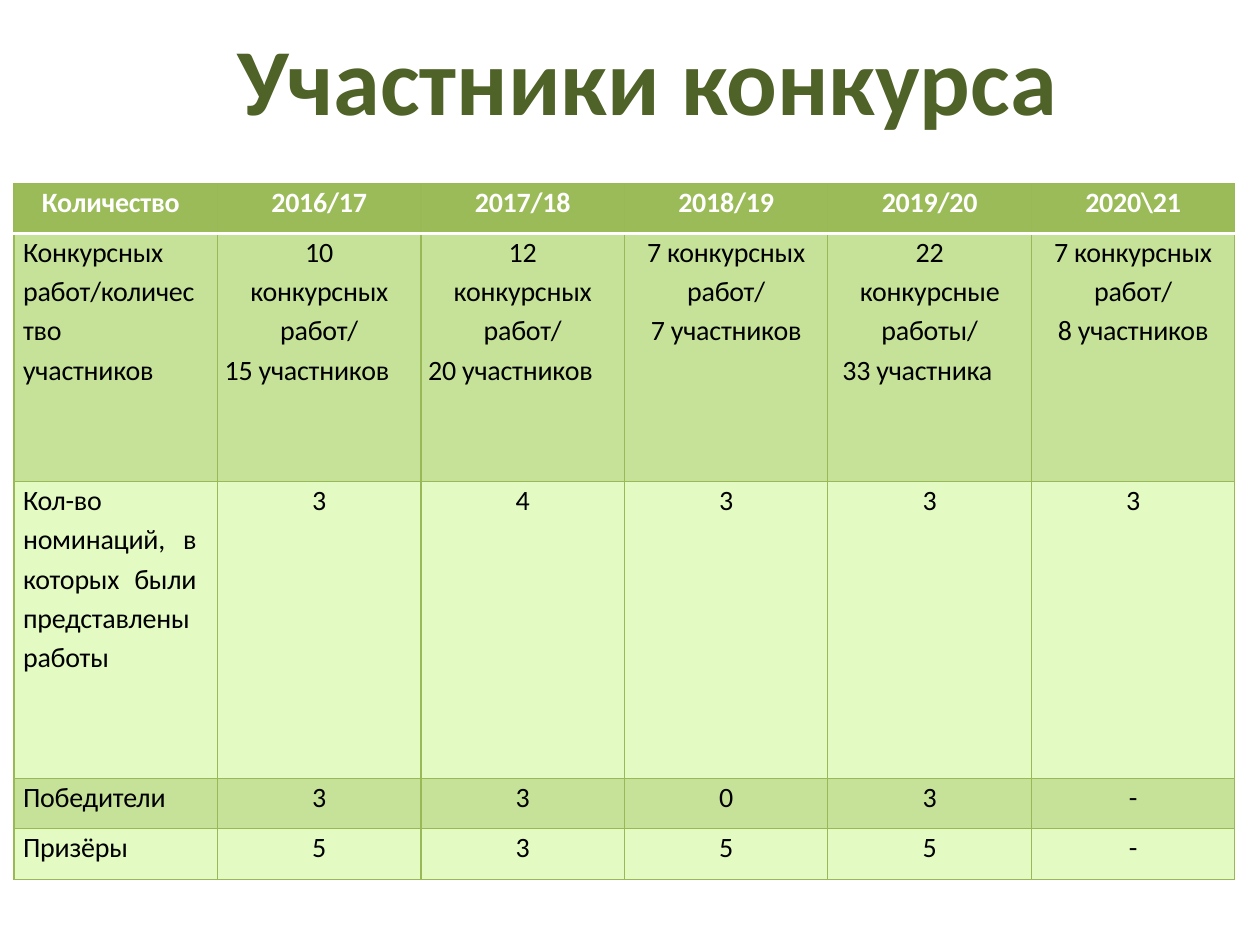
from dataclasses import dataclass

from lxml.etree import SubElement
from pptx import Presentation
from pptx.dml.color import RGBColor
from pptx.enum.text import MSO_AUTO_SIZE, PP_ALIGN
from pptx.oxml.ns import qn
from pptx.util import Pt

LEFT, MID, JUST = PP_ALIGN.LEFT, PP_ALIGN.CENTER, PP_ALIGN.JUSTIFY
FIT = MSO_AUTO_SIZE.SHAPE_TO_FIT_TEXT


@dataclass
class Theme:
    font: str = "Calibri"
    title: float = 54
    body: float = 16
    dark: str = "4F6228"
    head: str = "9BBB59"
    band: str = "C6E298"
    pale: str = "E3FBC2"
    rule: str = "98B955"
    white: str = "FFFFFF"
    black: str = "000000"


@dataclass
class Line:
    text: str
    align: int = MID
    left: float = 0
    right: float = 0
    gap: float = 0
    lead: float = 1


class Deck:
    """Draws styled elements on the current slide."""

    def __init__(self, theme):
        self.theme = theme
        self.prs = Presentation()
        self.prs.slide_width, self.prs.slide_height = Pt(720), Pt(540)
        self.slide = self.prs.slides.add_slide(self.prs.slide_layouts[6])

    def run(self, para, text, size, color, bold, track=0):
        run = para.add_run()
        run.text = text
        font = run.font
        font.name, font.size, font.bold = self.theme.font, Pt(size), bold
        font.color.rgb = RGBColor.from_string(color)
        if track:
            run._r.get_or_add_rPr().set("spc", str(round(track * 100)))
        return run

    def stroke(self, node, tag, color, width):
        line = SubElement(node, qn(tag), w=str(Pt(width)))
        fill = SubElement(line, qn("a:solidFill"))
        SubElement(fill, qn("a:srgbClr"), val=color)
        return line

    def title(self, text, left, top, width, height):
        box = self.slide.shapes.add_textbox(Pt(left), Pt(top), Pt(width), Pt(height))
        frame = box.text_frame
        frame.word_wrap, frame.auto_size = False, FIT
        para = frame.paragraphs[0]
        para.alignment = MID
        run = self.run(para, text, self.theme.title, self.theme.dark, True)
        props = run._r.get_or_add_rPr()
        props.insert(0, self.stroke(props, "a:ln", self.theme.dark, 0.75))

    def lines(self, frame, lines, color, bold):
        for pos, line in enumerate(lines):
            para = frame.add_paragraph() if pos else frame.paragraphs[0]
            para.alignment, para.line_spacing = line.align, line.lead
            if line.gap:
                para.space_before = Pt(line.gap)
            props = para._p.get_or_add_pPr()
            props.set("marL", str(Pt(line.left)))
            props.set("marR", str(Pt(line.right)))
            self.run(para, line.text, self.theme.body, color, bold, -0.1)

    def cell(self, cell, lines, row):
        look = self.theme
        cell.margin_left = cell.margin_right = cell.margin_bottom = 0
        cell.margin_top = Pt(1.3)
        props = cell._tc.get_or_add_tcPr()
        white = {0: "a:lnB", 1: "a:lnT"}.get(row)
        for tag in ("a:lnL", "a:lnR", "a:lnT", "a:lnB"):
            pair = (look.white, 2) if tag == white else (look.rule, 0.75)
            self.stroke(props, tag, *pair)
        fill = look.head if row == 0 else look.band if row % 2 else look.pale
        cell.fill.solid()
        cell.fill.fore_color.rgb = RGBColor.from_string(fill)
        self.lines(cell.text_frame, lines, look.black if row else look.white, row == 0)

    def table(self, rows, left, top, width, heights):
        count = len(rows[0])
        grid = self.slide.shapes.add_table(
            len(rows), count, Pt(left), Pt(top), Pt(width), Pt(sum(heights))
        ).table
        for col in grid.columns:
            col.width = Pt(width / count)
        for pos, (cells, height) in enumerate(zip(rows, heights)):
            grid.rows[pos].height = Pt(height)
            for col, lines in enumerate(cells):
                self.cell(grid.cell(pos, col), lines, pos)


def plain(*texts):
    return [[Line(text)] for text in texts]


def label(text):
    return Line(text, LEFT, 5.2)


def works(count, text, people):
    return [
        Line(count),
        Line(text, left=14, right=14, lead=1.15),
        Line(people, right=14, gap=2.9),
    ]


def seven(people):
    return [Line("7 конкурсных"), Line("работ/", gap=2.9), Line(people, gap=2.9)]


def main():
    deck = Deck(Theme())
    rows = [
        [[Line("Количество", LEFT, 16)]]
        + plain("2016/17", "2017/18", "2018/19", "2019/20", "2020\\21"),
        [
            [
                label("Конкурсных"),
                Line("работ/количес тво", LEFT, 5.2, lead=1.15),
                Line("участников", LEFT, 5.2, gap=2.9),
            ],
            works("10", "конкурсных работ/", "15 участников"),
            works("12", "конкурсных работ/", "20 участников"),
            seven("7 участников"),
            works("22", "конкурсные работы/", "33 участника"),
            seven("8 участников"),
        ],
        [
            [
                label("Кол-во"),
                Line(
                    "номинаций, в которых были представлены работы",
                    JUST, 5.2, 12, lead=1.15,
                ),
            ]
        ]
        + plain("3", "4", "3", "3", "3"),
        [[label("Победители")]] + plain("3", "3", "0", "3", "-"),
        [[label("Призёры")]] + plain("5", "3", "5", "5", "-"),
    ]
    deck.table(rows, 8, 105, 697.8, [28.4, 141.8, 169.8, 28.6, 28.8])
    deck.title("Участники конкурса", 126, 8.6, 488, 72.7)
    deck.prs.save("out.pptx")


if __name__ == "__main__":
    main()
